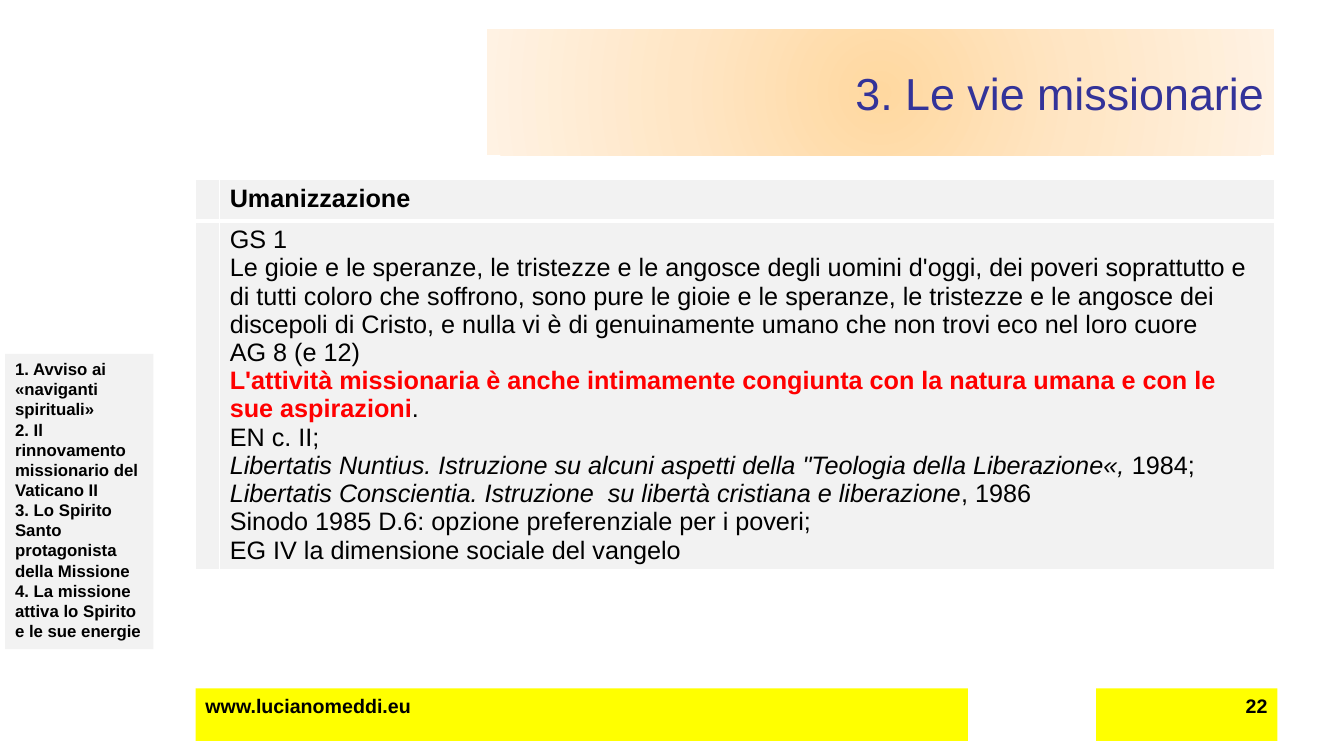
from lxml import etree
from pptx import Presentation
from pptx.dml.color import RGBColor
from pptx.enum.shapes import MSO_SHAPE as Shape
from pptx.enum.text import MSO_ANCHOR as Anchor, PP_ALIGN as Align
from pptx.oxml import parse_xml
from pptx.oxml.ns import nsdecls, qn
from pptx.util import Inches, Pt

SLIDE_WIDTH, SLIDE_HEIGHT = Inches(13.33), Inches(7.5)
BLACK = RGBColor(0x00, 0x00, 0x00)
RED = RGBColor(0xFF, 0x00, 0x00)
NAVY = RGBColor(0x33, 0x33, 0x99)
YELLOW = RGBColor(0xFF, 0xFF, 0x00)
GREY = RGBColor(0xF2, 0xF2, 0xF2)
WHITE = RGBColor(0xFF, 0xFF, 0xFF)
GLOW = {
    0: RGBColor(0xFF, 0xD8, 0xA0),
    50: RGBColor(0xFF, 0xE6, 0xC5),
    100: RGBColor(0xFF, 0xF2, 0xE3),
}
FONT = "Arial"
LINE_BREAK = "\n"

# Shares of the slide, in percent
CONTENT_LEFT, CONTENT_WIDTH = 14.55, 80.27
MARKER_COLUMN = 1.8
TABLE_TOP, HEADER_ROW, BODY_ROW = 23.73, 5.47, 46
FOOTER_TOP, FOOTER_HEIGHT = 91.07, 6.93

OUTLINE = [
    "1. Avviso ai «naviganti spirituali»",
    "2. Il rinnovamento missionario del Vaticano II",
    "3. Lo Spirito Santo protagonista della Missione",
    "4. La missione attiva lo Spirito e le sue energie",
]
HEADER = [[("Umanizzazione", "bold")]]
BODY = [
    [("GS 1", "")],
    [("Le gioie e le speranze, le tristezze e le angosce degli uomini d'oggi, "
      "dei poveri soprattutto e di tutti coloro che soffrono, sono pure le gioie "
      "e le speranze, le tristezze e le angosce dei discepoli di Cristo, e nulla "
      "vi è di genuinamente umano che non trovi eco nel loro cuore", "")],
    [("AG 8 (e 12)", "")],
    [("L'attività missionaria è anche intimamente congiunta con la natura umana "
      "e con le sue aspirazioni", "bold red"), (".", "")],
    [("EN c. II; ", ""), (LINE_BREAK, ""),
     ("Libertatis Nuntius. Istruzione su alcuni aspetti della "
      "\"Teologia della Liberazione«, ", "italic"), ("1984;", "")],
    [("Libertatis Conscientia. Istruzione  su libertà cristiana e liberazione",
      "italic"), (", 1986", ""), (LINE_BREAK, ""),
     ("Sinodo 1985 D.6: opzione preferenziale per i poveri;", "")],
    [("EG IV la dimensione sociale del vangelo", "")],
]


def across(percent):
    return round(SLIDE_WIDTH * percent / 100)


def down(percent):
    return round(SLIDE_HEIGHT * percent / 100)


def add_panel(slide, area, lines, size, fill=None, color=BLACK, bold=True,
              align=Align.LEFT, anchor=Anchor.TOP):
    left, top, width, height = area
    panel = slide.shapes.add_shape(Shape.RECTANGLE, across(left), down(top),
                                   across(width), down(height))
    panel.shadow.inherit = False
    panel.line.fill.background()
    if fill is not None:
        panel.fill.solid()
        panel.fill.fore_color.rgb = fill
    frame = panel.text_frame
    frame.word_wrap = True
    frame.vertical_anchor = anchor
    frame.text = "\n".join(lines)
    for paragraph in frame.paragraphs:
        paragraph.alignment = align
        for run in paragraph.runs:
            font = run.font
            font.name, font.size, font.bold = FONT, Pt(size), bold
            font.color.rgb = color
    return panel


def fill_from_centre(shape, stops):
    """Give the shape a circular gradient; stops maps percent to colour."""
    shape.fill.gradient()
    gradient = shape.element.spPr.find(qn("a:gradFill"))
    stop_xml = "".join(
        f'<a:gs pos="{position * 1000}"><a:srgbClr val="{color}"/></a:gs>'
        for position, color in stops.items())
    gradient.getparent().replace(gradient, parse_xml(
        f'<a:gradFill {nsdecls("a")} rotWithShape="1"><a:gsLst>{stop_xml}</a:gsLst>'
        '<a:path path="circle"><a:fillToRect l="50000" t="50000" r="50000" '
        'b="50000"/></a:path></a:gradFill>'))


def write_cell(cell, paragraphs):
    """Write paragraphs, each a list of (text, style words) pieces."""
    frame = cell.text_frame
    for index, pieces in enumerate(paragraphs):
        paragraph = frame.add_paragraph() if index else frame.paragraphs[0]
        paragraph.font.size = Pt(18)
        for text, style in pieces:
            if text == LINE_BREAK:
                paragraph.add_line_break()
                continue
            run = paragraph.add_run()
            run.text = text
            font = run.font
            font.name, font.size = FONT, Pt(18)
            font.bold = "bold" in style
            font.italic = "italic" in style
            font.color.rgb = RED if "red" in style else BLACK


def paint_cell(cell, bottom_width):
    cell.fill.solid()
    cell.fill.fore_color.rgb = GREY
    properties = cell._tc.get_or_add_tcPr()
    widths = {"lnL": 1, "lnR": 1, "lnT": 1, "lnB": bottom_width}
    for index, (side, width) in enumerate(widths.items()):
        border = etree.Element(qn(f"a:{side}"), w=str(Pt(width)))
        solid = etree.SubElement(border, qn("a:solidFill"))
        etree.SubElement(solid, qn("a:srgbClr"), val=str(WHITE))
        properties.insert(index, border)


def add_sources_table(slide):
    table = slide.shapes.add_table(
        2, 2, across(CONTENT_LEFT), down(TABLE_TOP), across(CONTENT_WIDTH),
        down(HEADER_ROW + BODY_ROW)).table
    table.columns[0].width = across(MARKER_COLUMN)
    table.columns[1].width = across(CONTENT_WIDTH - MARKER_COLUMN)
    rows = [(HEADER_ROW, HEADER, 3), (BODY_ROW, BODY, 1)]
    for index, (height, content, bottom_width) in enumerate(rows):
        table.rows[index].height = down(height)
        marker, text_cell = table.cell(index, 0), table.cell(index, 1)
        write_cell(marker, [[]])
        write_cell(text_cell, content)
        for cell in (marker, text_cell):
            paint_cell(cell, bottom_width)
    for cell in (table.cell(1, 0), table.cell(1, 1)):
        top_border = cell._tc.tcPr.find(qn("a:lnT"))
        top_border.set("w", str(Pt(3)))


def main():
    presentation = Presentation()
    presentation.slide_width = SLIDE_WIDTH
    presentation.slide_height = SLIDE_HEIGHT
    slide = presentation.slides.add_slide(presentation.slide_layouts[6])

    add_panel(slide, (0.38, 46.8, 11.03, 39.07), OUTLINE, 12, GREY)
    title = add_panel(slide, (36.23, 3.87, 58.59, 16.67),
                      ["3. Le vie missionarie"], 32, color=NAVY, bold=False,
                      align=Align.RIGHT, anchor=Anchor.MIDDLE)
    fill_from_centre(title, GLOW)
    add_panel(slide, (CONTENT_LEFT, FOOTER_TOP, 57.46, FOOTER_HEIGHT),
              ["www.lucianomeddi.eu"], 14, YELLOW)
    add_panel(slide, (81.55, FOOTER_TOP, 13.5, FOOTER_HEIGHT),
              ["22"], 14, YELLOW, align=Align.RIGHT)
    add_sources_table(slide)

    presentation.save("out.pptx")


if __name__ == "__main__":
    main()
